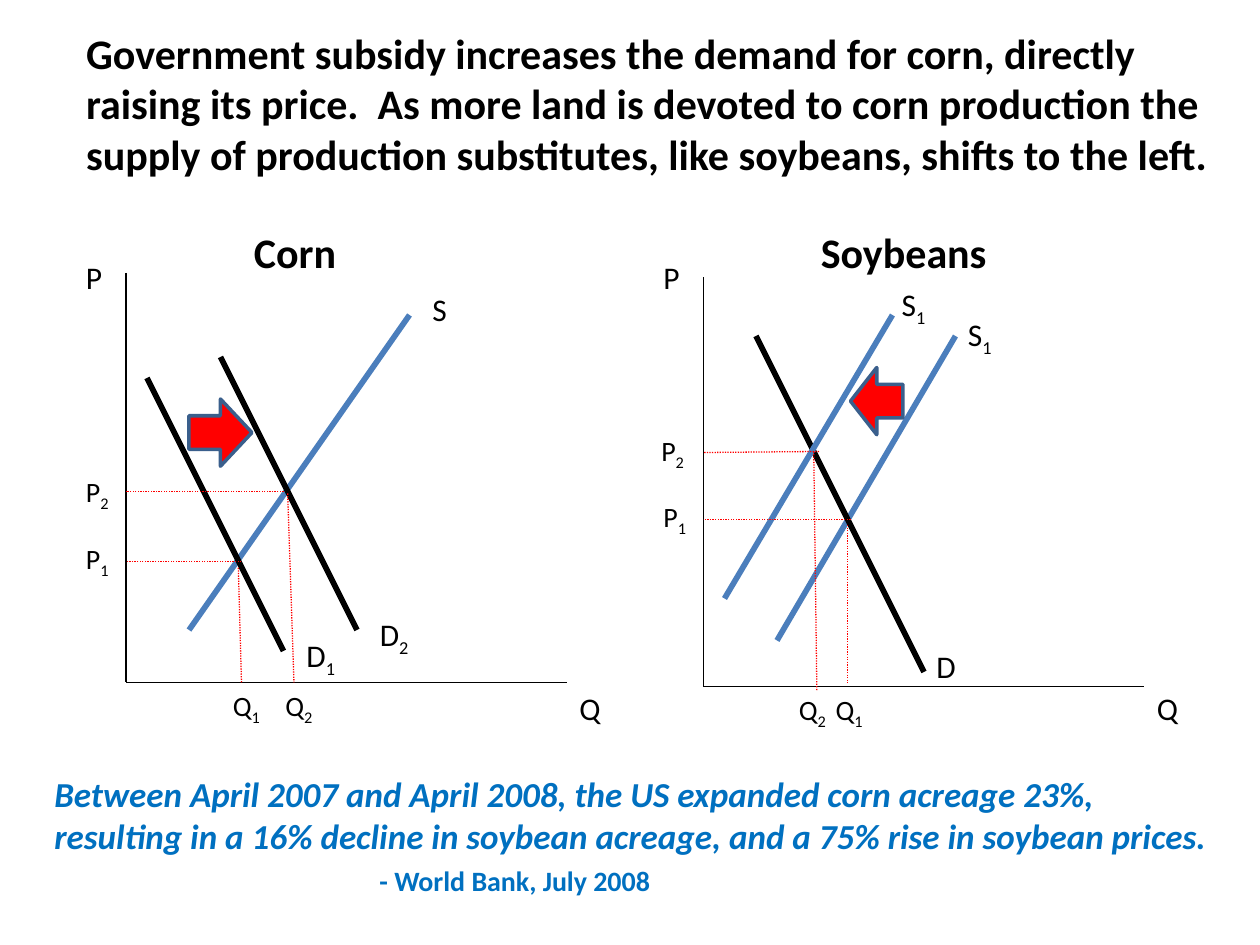
from pptx import Presentation
from pptx.dml.color import RGBColor as RGB
from pptx.enum.dml import MSO_LINE as Dash
from pptx.enum.shapes import MSO_CONNECTOR as Conn, MSO_SHAPE as Kind
from pptx.enum.text import MSO_ANCHOR as Anchor, MSO_AUTO_SIZE as Auto, PP_ALIGN as Align
from pptx.oxml.ns import qn
from pptx.util import Inches, Pt
from lxml.etree import SubElement

BLACK = RGB(0x00, 0x00, 0x00)
RED = RGB(0xFF, 0x00, 0x00)
STEEL = RGB(0x4B, 0x7E, 0xBC)
NAVY = RGB(0x3A, 0x5F, 0x8C)
BLUE = RGB(0x00, 0x70, 0xC0)

COLS, ROWS = 120, 90    # slide grid, twelve units to the inch
SPAN = 42               # length of a quantity axis
TALL = 39               # height of a price axis


def grid(*nums):
    return [Inches(n / 12) for n in nums]


def style(run, size=18, color=BLACK, bold=False, italic=False, sub=False):
    font = run.font
    font.name, font.size, font.bold, font.italic = "Calibri", Pt(size), bold, italic
    font.color.rgb = color
    if sub:
        font._element.set("baseline", "-25000")


def write(shape, text, low="", **form):
    """Fill the shape's first paragraph; low is a subscript."""
    frame = shape.text_frame
    frame.word_wrap, frame.auto_size = True, Auto.NONE
    frame.vertical_anchor = Anchor.TOP
    para = frame.paragraphs[0]
    para.alignment = Align.LEFT
    for part, sub in ((text, False), (low, True)):
        if part:
            run = para.add_run()
            run.text = part
            style(run, sub=sub, **form)


def label(slide, box, text, low="", **form):
    write(slide.shapes.add_textbox(*grid(*box)), text, low, **form)


def line(slide, ends, color=BLACK, width=0.75, dash=None):
    link = slide.shapes.add_connector(Conn.STRAIGHT, *grid(*ends))
    link.line.color.rgb, link.line.width = color, Pt(width)
    if dash:
        link.line.dash_style = dash
    SubElement(link._element.spPr, qn("a:effectLst"))


def curve(slide, ends, color):
    line(slide, ends, color, 3.25)


def arrow(slide, box, turn=0):
    shape = slide.shapes.add_shape(Kind.RIGHT_ARROW, *grid(*box))
    shape.shadow.inherit = False
    shape.rotation = turn
    shape.fill.solid()
    shape.fill.fore_color.rgb = RED
    shape.line.color.rgb, shape.line.width = NAVY, Pt(2)


def axes(slide, left, base):
    line(slide, (left, base - TALL, left, base))
    line(slide, (left, base, left + SPAN, base))
    label(slide, (left - 5, 24, 5, 4.8), "P")
    label(slide, (left + SPAN, 65, 5, 4.8), "Q")


def panel(slide, left, base, name, curves, guides, names, marks):
    axes(slide, left, base)
    for ends, color in curves:
        curve(slide, ends, color)
    for ends in guides:
        line(slide, ends, RED, dash=Dash.ROUND_DOT)
    label(slide, name[1], name[0], size=24, bold=True)
    for x, y, text, low in names:
        label(slide, (x, y, 6, 4.8), text, low)
    for x, y, text, low in marks:
        label(slide, (x, y, 5 if text == "P" else 6, 4.4), text, low, size=16)


def quote(slide):
    box = slide.shapes.add_textbox(*grid(4, 73, 113, 12.5))
    write(box, "Between April 2007 and April 2008, the US expanded corn acreage 23%, "
          "resulting in a 16% decline in soybean acreage, and a 75% rise in "
          "soybean prices.", size=20, color=BLUE, bold=True, italic=True)
    para = box.text_frame.add_paragraph()
    para.space_before = Pt(4)
    para._p.get_or_add_pPr().set("marL", str(Inches(2.58)))
    run = para.add_run()
    run.text = "- World Bank, July 2008"
    style(run, 16, BLUE, bold=True)


def main():
    deck = Presentation()
    deck.slide_width, deck.slide_height = grid(COLS, ROWS)
    slide = deck.slides.add_slide(deck.slide_layouts[5])

    # Title
    title = slide.shapes.title
    title.left, title.top, title.width, title.height = grid(7, 2, 111, 15.75)
    write(title, "Government subsidy increases the demand for corn, directly raising "
          "its price.  As more land is devoted to corn production the supply of "
          "production substitutes, like soybeans, shifts to the left.",
          size=24, bold=True)

    # Corn: demand shifts right
    panel(slide, 12, 65, ("Corn", (23, 21, 14, 6)),
          curves=[((18, 60, 39, 30), STEEL),
                  ((14, 36, 27, 62), BLACK),
                  ((21, 34, 34, 60), BLACK)],
          guides=[(23, 53.5, 12, 53.5), (23, 65, 22.7, 54),
                  (27, 46.8, 12, 46.8), (27.4, 47, 28, 65)],
          names=[(40, 27, "S", ""), (28, 60, "D", "1"), (35, 58, "D", "2")],
          marks=[(21, 65, "Q", "1"), (26, 65, "Q", "2"),
                 (7, 44.6, "P", "2"), (7, 51, "P", "1")])
    arrow(slide, (18, 38, 6, 6.4))

    # Soybeans: supply shifts left
    panel(slide, 67, 65.4, ("Soybeans", (77, 21, 23, 6)),
          curves=[((74, 61, 91, 32), STEEL),
                  ((72, 32, 88, 64), BLACK),
                  ((69, 57, 85, 30), STEEL)],
          guides=[(81, 49.5, 67, 49.5), (80.7, 50, 80.7, 65),
                  (78, 43, 67, 43.1), (77.5, 43, 77.8, 65.8)],
          names=[(91, 29.4, "S", "1"), (84.7, 26.6, "S", "1"), (88, 61, "D", "")],
          marks=[(78.4, 65.4, "Q", "1"), (74.9, 65.4, "Q", "2"),
                 (61.8, 40.7, "P", "2"), (62, 47, "P", "1")])
    arrow(slide, (81, 35, 5, 6.4), turn=180)

    # Closing quote
    quote(slide)
    deck.save("out.pptx")


if __name__ == "__main__":
    main()
